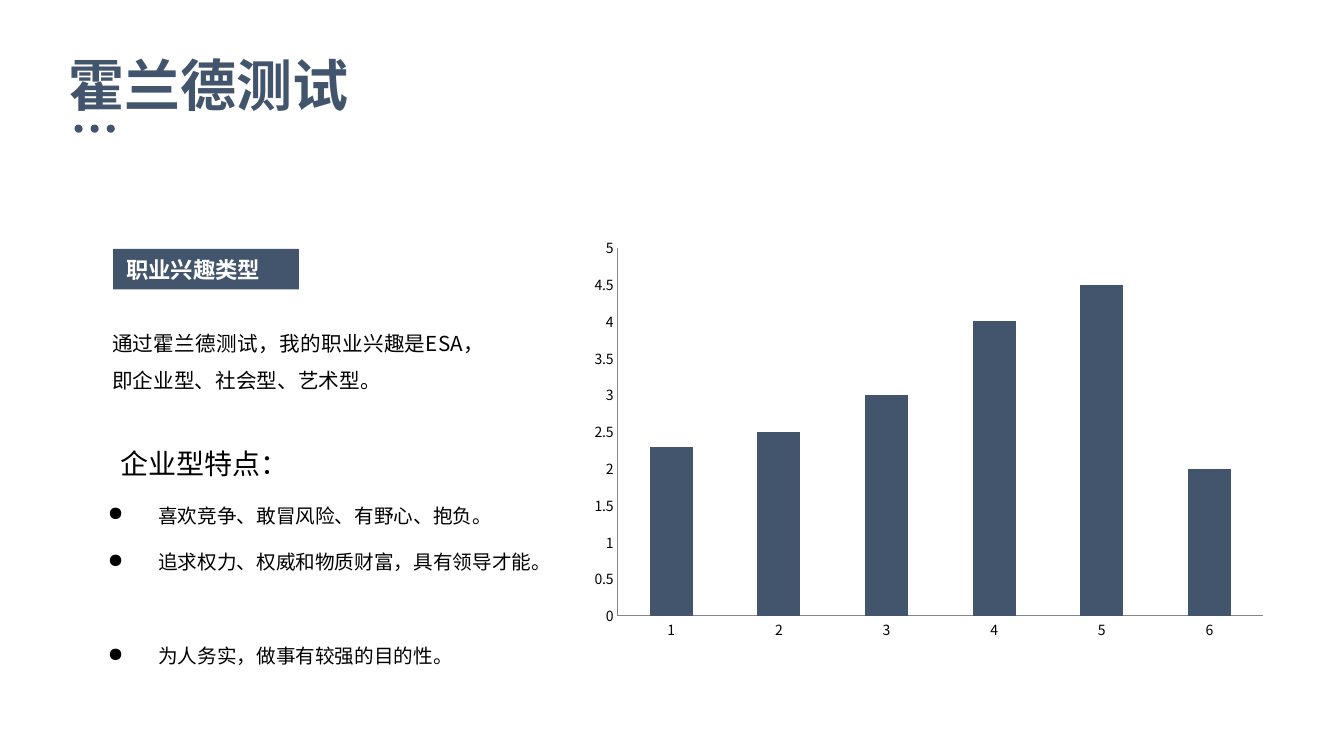
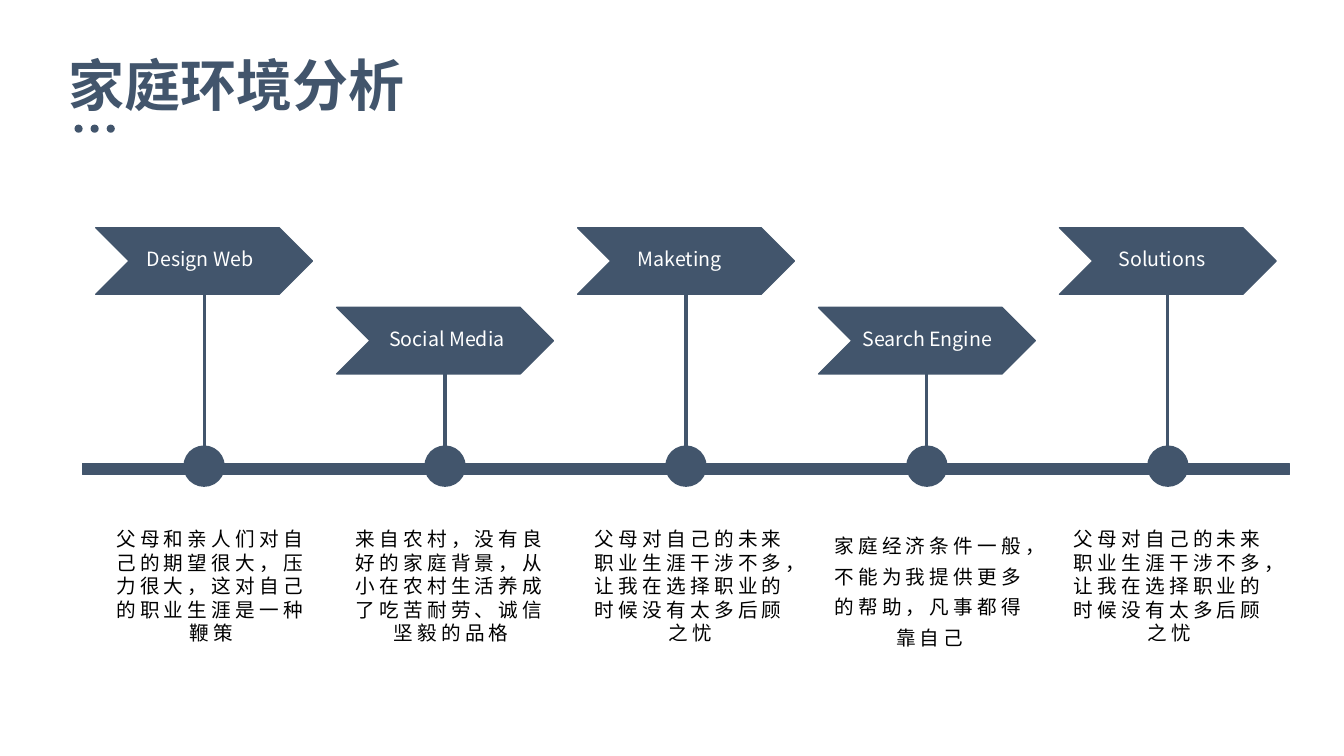
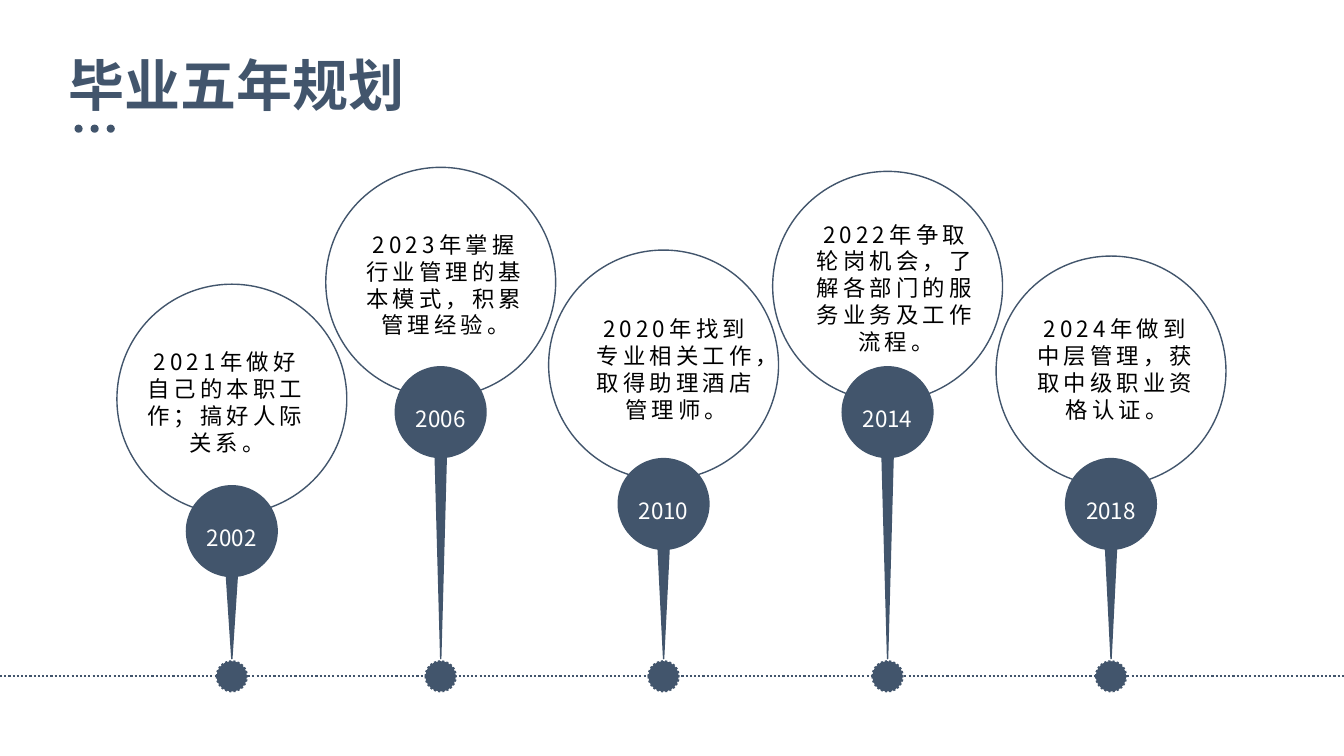
from lxml import etree
from pptx import Presentation
from pptx import util as u
from pptx.chart import data as chart_data
from pptx.dml import color
from pptx.enum import chart as chart_enum, dml, shapes, text
from pptx.oxml import ns

Pt = u.Pt
FONT = "Noto Sans CJK SC"
SLATE, BLACK, WHITE, GRAY = "42556C", "000000", "FFFFFF", "868686"
LEFT, CENTER, JUSTIFY = text.PP_ALIGN.LEFT, text.PP_ALIGN.CENTER, text.PP_ALIGN.JUSTIFY
TOP, MIDDLE = text.MSO_ANCHOR.TOP, text.MSO_ANCHOR.MIDDLE
SHAPE = shapes.MSO_SHAPE
DOTTED = dml.MSO_LINE.ROUND_DOT

INTEREST = "通过霍兰德测试，我的职业兴趣是ESA，即企业型、社会型、艺术型。"
TRAITS_HEADING = "企业型特点："
TRAITS = [
    ("喜欢竞争、敢冒风险、有野心、抱负。", 0),
    ("追求权力、权威和物质财富，具有领导才能。", 0),
    ("为人务实，做事有较强的目的性。", 33.4),
]
SCORES = [2.3, 2.5, 3, 4, 4.5, 2]

FAMILY = [
    ("Design Web", 105, "父母和亲人们对自己的期望很大，压力很大，这对自己的职业生涯是一种鞭策", None),
    ("Social Media", 278, "来自农村，没有良好的家庭背景，从小在农村生活养成了吃苦耐劳、诚信坚毅的品格", None),
    ("Maketing", 455.5, "父母对自己的未来职业生涯干涉不多，让我在选择职业的时候没有太多后顾之忧", None),
    ("Search Engine", 616, "家庭经济条件一般，不能为我提供更多的帮助，凡事都得靠自己", 1.3),
    ("Solutions", 799, "父母对自己的未来职业生涯干涉不多，让我在选择职业的时候没有太多后顾之忧", None),
]

PLAN = [
    ("2002", 165.6, 203, 347, 101.5, 249, "2021年做好自己的本职工作；搞好人际关系。"),
    ("2006", 314.8, 119.5, 262, 257.8, 165, "2023年掌握行业管理的基本模式，积累管理经验。"),
    ("2010", 474, 178.6, 327.6, 422.6, 225.4, "2020年找到专业相关工作，取得助理酒店管理师。"),
    ("2014", 634, 122.4, 262, 579.6, 157.7, "2022年争取轮岗机会，了解各部门的服务业务及工作流程。"),
    ("2018", 793.6, 182.9, 327.6, 737.3, 225.4, "2024年做到中层管理，获取中级职业资格认证。"),
]


def rgb(value):
    return color.RGBColor.from_string(value)


def set_font(paragraph, size, ink=BLACK, bold=False, spacing=0):
    font = paragraph.font
    font.name, font.size, font.bold = FONT, Pt(size), bold
    font.color.rgb = rgb(ink)
    properties = paragraph._p.pPr.find(ns.qn("a:defRPr"))
    etree.SubElement(properties, ns.qn("a:ea")).set("typeface", FONT)
    if spacing:
        properties.set("spc", str(spacing * 100))


def set_frame(shape, margins=(0, 0, 0, 0), anchor=TOP, wrap=True):
    frame = shape.text_frame
    frame.margin_left, frame.margin_top, frame.margin_right, frame.margin_bottom = map(Pt, margins)
    frame.vertical_anchor, frame.word_wrap = anchor, wrap
    frame.auto_size = text.MSO_AUTO_SIZE.NONE
    return frame


def write(frame, words, size, ink=BLACK, align=LEFT, bold=False, spacing=0, line_spacing=None):
    paragraph = frame.paragraphs[0]
    paragraph.text, paragraph.alignment = words, align
    paragraph.line_spacing = line_spacing
    set_font(paragraph, size, ink, bold, spacing)
    return paragraph


def add_box(slide, left, top, width, height, **options):
    return set_frame(slide.shapes.add_textbox(Pt(left), Pt(top), Pt(width), Pt(height)), **options)


def add_shape(slide, kind, left, top, width, height, fill=SLATE, line=0, dash=None):
    shape = slide.shapes.add_shape(kind, Pt(left), Pt(top), Pt(width), Pt(height))
    shape.shadow.inherit = False
    if fill:
        shape.fill.solid()
        shape.fill.fore_color.rgb = rgb(fill)
    else:
        shape.fill.background()
    if line:
        shape.line.color.rgb = rgb(SLATE)
        shape.line.width = Pt(line)
        shape.line.dash_style = dash
    else:
        shape.line.fill.background()
    return shape


def add_line(slide, x1, y1, x2, y2, width, dash=None):
    line = slide.shapes.add_connector(shapes.MSO_CONNECTOR.STRAIGHT, Pt(x1), Pt(y1), Pt(x2), Pt(y2))
    line.line.color.rgb = rgb(SLATE)
    line.line.width = Pt(width)
    line.line.dash_style = dash
    etree.SubElement(line._element.spPr, ns.qn("a:effectLst"))


def add_slide(presentation, words):
    slide = presentation.slides.add_slide(presentation.slide_layouts[5])
    title = slide.shapes.title
    title.left, title.top, title.width, title.height = Pt(49), Pt(36), Pt(839), Pt(48)
    write(set_frame(title), words, 40, SLATE, bold=True)
    for index in range(3):
        add_shape(slide, SHAPE.OVAL, 53.2 + 11.5 * index, 89, 5.8, 5.8)
    return slide


def add_bullet(frame, words, space_before):
    paragraph = frame.add_paragraph()
    paragraph.text, paragraph.alignment = words, JUSTIFY
    paragraph.line_spacing, paragraph.space_before = Pt(33.4), Pt(space_before)
    properties = paragraph._p.get_or_add_pPr()
    properties.set("marL", str(Pt(36)))
    properties.set("indent", str(-Pt(36)))
    etree.SubElement(properties, ns.qn("a:buChar")).set("char", "●")
    set_font(paragraph, 14)


def add_score_chart(slide):
    scores = chart_data.CategoryChartData(number_format="General")
    scores.categories = [str(number) for number in range(1, len(SCORES) + 1)]
    scores.add_series("Series 1", SCORES)
    chart = slide.shapes.add_chart(
        chart_enum.XL_CHART_TYPE.COLUMN_CLUSTERED, Pt(414.7), Pt(164), Pt(497.5), Pt(299), scores
    ).chart
    chart.has_legend = chart.has_title = False
    chart.font.name, chart.font.size = FONT, Pt(10)
    chart.font.color.rgb = rgb(BLACK)
    plot = chart.plots[0]
    plot.gap_width, plot.vary_by_categories = 150, False
    fill = plot.series[0].format.fill
    fill.solid()
    fill.fore_color.rgb = rgb(SLATE)
    for axis in (chart.category_axis, chart.value_axis):
        axis.has_major_gridlines = False
        axis.major_tick_mark = axis.minor_tick_mark = chart_enum.XL_TICK_MARK.NONE
        axis.format.line.color.rgb = rgb(GRAY)
        axis.format.line.width = Pt(0.75)
    chart.value_axis.minimum_scale, chart.value_axis.maximum_scale = 0, 5
    chart.value_axis.major_unit = 0.5


def build_test(presentation):
    slide = add_slide(presentation, "霍兰德测试")
    add_score_chart(slide)
    margins = (9.4, 5, 9.4, 5)
    label = add_shape(slide, SHAPE.RECTANGLE, 80.8, 177.8, 132.8, 29)
    write(set_frame(label, margins, MIDDLE), "职业兴趣类型", 16, WHITE, bold=True)
    interest = add_box(slide, 70.6, 222.5, 284.4, 81.4, margins=margins)
    write(interest, INTEREST, 14.7, align=JUSTIFY, line_spacing=Pt(26.6))
    traits = add_box(slide, 67.7, 314, 340, 151, margins=margins)
    heading = write(traits, TRAITS_HEADING, 20)
    heading._p.pPr.set("marL", str(Pt(9)))
    for words, space_before in TRAITS:
        add_bullet(traits, words, space_before)


def build_family(presentation):
    slide = add_slide(presentation, "家庭环境分析")
    add_shape(slide, SHAPE.RECTANGLE, 59, 331.2, 862, 8, line=1)
    step, dot = 172.1, 26.6
    for index, (name, name_left, words, line_spacing) in enumerate(FAMILY):
        offset = step * index
        center = 145.8 + offset
        sign_top = 219.6 if index % 2 else 162.7
        add_line(slide, center, sign_top + 47.5, center, 333, 2.25)
        add_shape(slide, SHAPE.OVAL, center - dot / 2, 319.7, dot, dot, line=3)
        add_shape(slide, SHAPE.CHEVRON, 68.4 + offset, sign_top, 154.8, 47.5, line=1)
        sign = add_box(slide, name_left, sign_top + 10, 100, 24.5, anchor=MIDDLE, wrap=False)
        write(sign, name, 14, WHITE)
        note = add_box(slide, 79.2 + 171 * index, 376.6, 144, 85)
        write(note, words, 14, align=CENTER, spacing=3, line_spacing=line_spacing)


def build_plan(presentation):
    slide = add_slide(presentation, "毕业五年规划")
    axis, dot, bubble, badge = 483.1, 21.6, 164.2, 64.8
    add_line(slide, 0, axis, 960, axis, 1.5, DOTTED)
    for year, center, bubble_top, badge_top, words_left, words_top, words in PLAN:
        add_shape(slide, SHAPE.OVAL, center - bubble / 2, bubble_top, bubble, bubble, fill=None, line=1)
        add_shape(slide, SHAPE.OVAL, center - dot / 2, axis - dot / 2, dot, dot, line=1.5, dash=DOTTED)
        pin_top = badge_top + badge - 2
        pin = add_shape(slide, SHAPE.ISOSCELES_TRIANGLE, center - 4, pin_top, 8, 470.5 - pin_top, line=1)
        pin.rotation = 180
        circle = add_shape(slide, SHAPE.OVAL, center - badge / 2, badge_top, badge, badge, line=1)
        write(set_frame(circle, (0, 9, 0, 0), MIDDLE, False), year, 16, WHITE, CENTER)
        note = add_box(slide, words_left, words_top, 121, 97)
        write(note, words, 16, align=CENTER, spacing=3)


def main():
    presentation = Presentation()
    presentation.slide_width, presentation.slide_height = Pt(960), Pt(540)
    build_test(presentation)
    build_family(presentation)
    build_plan(presentation)
    presentation.save("out.pptx")


if __name__ == "__main__":
    main()
